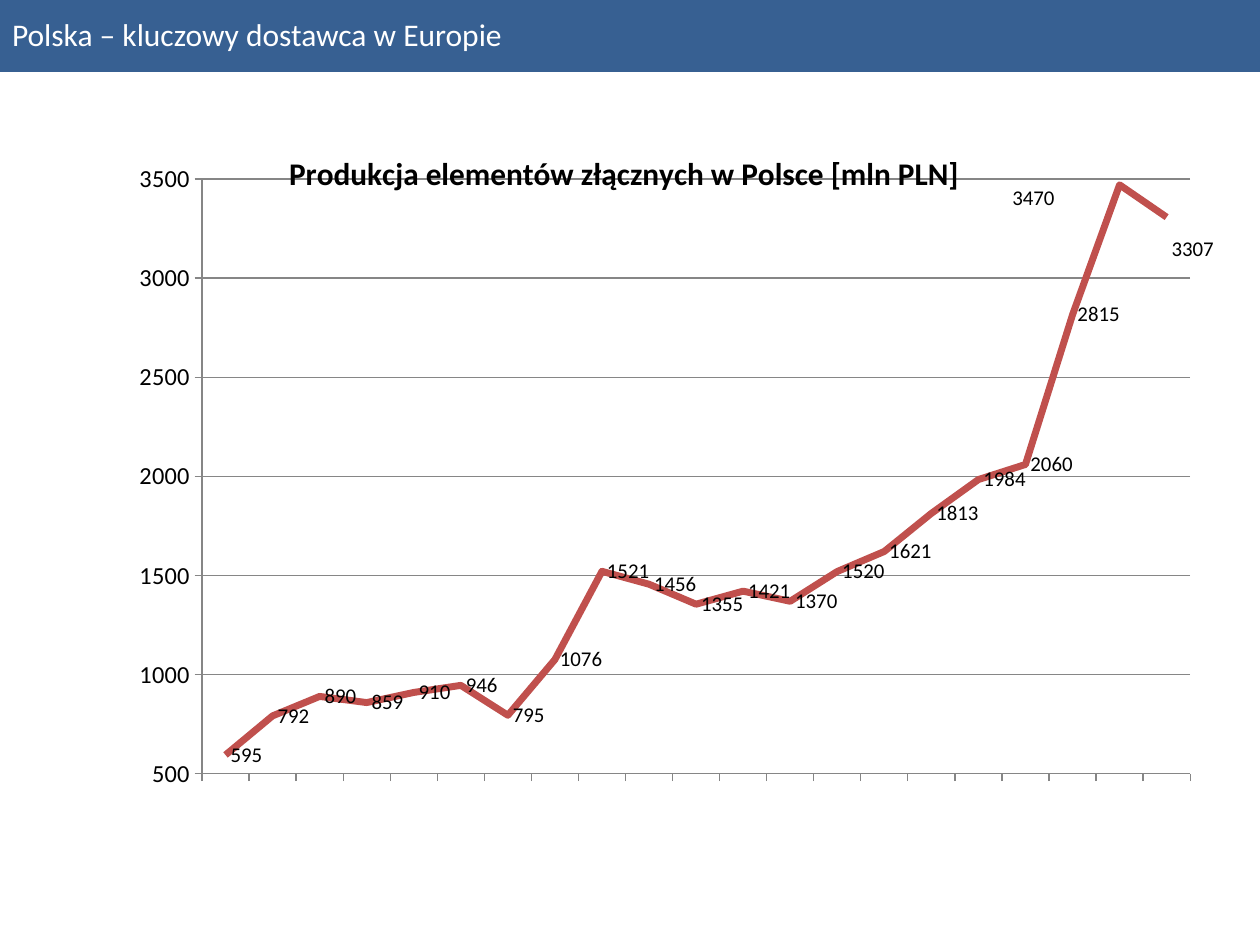
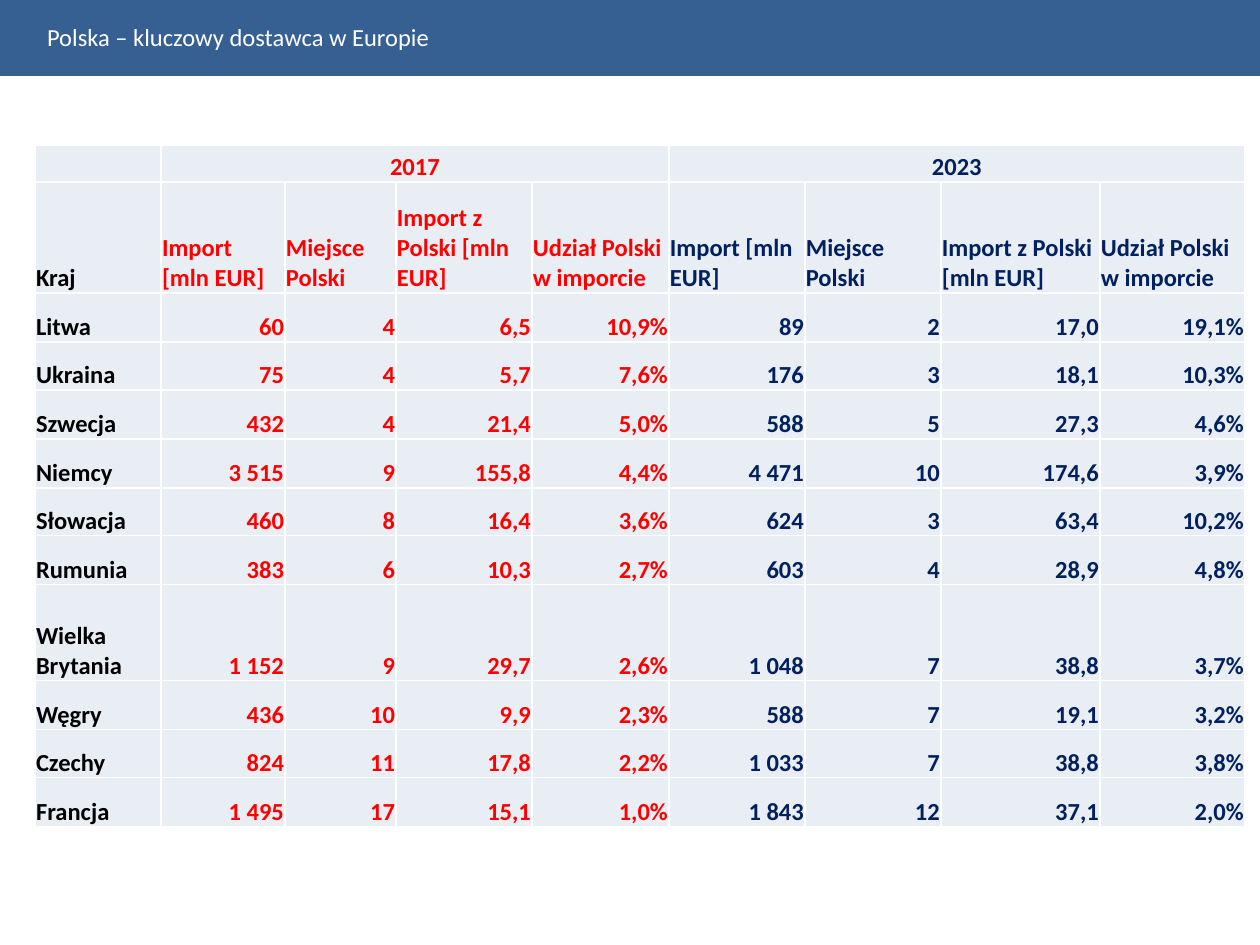
from dataclasses import dataclass

from lxml import etree
from pptx import Presentation
from pptx.chart.data import CategoryChartData
from pptx.dml.color import RGBColor
from pptx.enum.chart import XL_CHART_TYPE, XL_LABEL_POSITION, XL_MARKER_STYLE, XL_TICK_LABEL_POSITION, XL_TICK_MARK
from pptx.enum.shapes import MSO_SHAPE
from pptx.enum.text import MSO_ANCHOR, MSO_AUTO_SIZE, PP_ALIGN
from pptx.oxml.ns import qn
from pptx.util import Pt

RECTANGLE = MSO_SHAPE.RECTANGLE
LINE = XL_CHART_TYPE.LINE
NO_MARKER = XL_MARKER_STYLE.NONE
LABEL_RIGHT = XL_LABEL_POSITION.RIGHT
NO_TICK_LABELS = XL_TICK_LABEL_POSITION.NONE
TICK_OUTSIDE = XL_TICK_MARK.OUTSIDE
MIDDLE, BOTTOM = MSO_ANCHOR.MIDDLE, MSO_ANCHOR.BOTTOM
LEFT, CENTER, RIGHT = PP_ALIGN.LEFT, PP_ALIGN.CENTER, PP_ALIGN.RIGHT
NO_AUTOFIT = MSO_AUTO_SIZE.NONE
TITLE_ONLY = 5
EMU_PER_PX = 914400 / 126


@dataclass(frozen=True)
class Theme:
    """Colours and type sizes shared by the slides."""
    font: str = "Calibri"
    band: str = "376092"
    white: str = "FFFFFF"
    black: str = "000000"
    trend: str = "C0504D"
    grid: str = "868686"
    cell: str = "E9EDF4"
    earlier: str = "FF0000"
    later: str = "002060"
    heading: int = 18
    body: int = 14
    label: int = 12


THEME = Theme()
HEADING = "Polska – kluczowy dostawca w Europie"

PRODUCTION_TITLE = "Produkcja elementów złącznych w Polsce [mln PLN]"
PRODUCTION = (595, 792, 890, 859, 910, 946, 795, 1076, 1521, 1456, 1355,
              1421, 1370, 1520, 1621, 1813, 1984, 2060, 2815, 3470, 3307)
LABEL_SHIFTS = {19: (-113, 13), 20: (0, 32)}

YEARS = ("2017", "2023")
MEASURES = ("Import [mln EUR]", "Miejsce Polski",
            "Import z Polski [mln EUR]", "Udział Polski w imporcie")
IMPORTS = (
    ("Litwa", "60", "4", "6,5", "10,9%", "89", "2", "17,0", "19,1%"),
    ("Ukraina", "75", "4", "5,7", "7,6%", "176", "3", "18,1", "10,3%"),
    ("Szwecja", "432", "4", "21,4", "5,0%", "588", "5", "27,3", "4,6%"),
    ("Niemcy", "3 515", "9", "155,8", "4,4%", "4 471", "10", "174,6", "3,9%"),
    ("Słowacja", "460", "8", "16,4", "3,6%", "624", "3", "63,4", "10,2%"),
    ("Rumunia", "383", "6", "10,3", "2,7%", "603", "4", "28,9", "4,8%"),
    ("Wielka Brytania", "1 152", "9", "29,7", "2,6%", "1 048", "7", "38,8", "3,7%"),
    ("Węgry", "436", "10", "9,9", "2,3%", "588", "7", "19,1", "3,2%"),
    ("Czechy", "824", "11", "17,8", "2,2%", "1 033", "7", "38,8", "3,8%"),
    ("Francja", "1 495", "17", "15,1", "1,0%", "1 843", "12", "37,1", "2,0%"),
)
COLUMN_WIDTHS = (126, 124, 111, 136, 137, 136, 136, 159, 145)
COUNTRY_HEIGHTS = (49, 48, 49)
ROW_HEIGHTS = (37, 111, *COUNTRY_HEIGHTS * 2, 96, *COUNTRY_HEIGHTS)


def px(length):
    """Turn px into EMU."""
    return round(length * EMU_PER_PX)


def rgb(colour):
    """Turn a hex string into a colour."""
    return RGBColor.from_string(colour)


def style(font, size, colour, bold=False):
    """Give a font the shared typeface with a size and colour."""
    font.name, font.size, font.bold = THEME.font, Pt(size), bold
    font.color.rgb = rgb(colour)


def add_heading(slide, band_box, heading_box, size):
    """Place the title placeholder over a full-width band."""
    heading = slide.shapes.title
    band = slide.shapes.add_shape(RECTANGLE, *map(px, band_box))
    heading.element.addprevious(band.element)
    band.shadow.inherit = False
    band.fill.solid()
    band.fill.fore_color.rgb = rgb(THEME.band)
    band.line.fill.background()

    heading.left, heading.top, heading.width, heading.height = map(px, heading_box)
    frame = heading.text_frame
    frame.text = HEADING
    frame.auto_size = NO_AUTOFIT
    frame.word_wrap = True
    frame.vertical_anchor = MIDDLE
    frame.margin_left = frame.margin_right = px(12)
    frame.margin_top = frame.margin_bottom = px(6)
    line = frame.paragraphs[0]
    line.alignment = LEFT
    style(line.font, size, THEME.white)


def set_layout(parent, index, **settings):
    """Give a chart part a manual layout as the child at the index."""
    for old in parent.findall(qn("c:layout")):
        parent.remove(old)
    layout = etree.Element(qn("c:layout"))
    parent.insert(index, layout)
    manual = etree.SubElement(layout, qn("c:manualLayout"))
    for key, value in settings.items():
        etree.SubElement(manual, qn(f"c:{key}")).set("val", str(value))


def hide_leader_lines(labels):
    """Switch off the lines from moved labels to their points."""
    for old in labels.findall(qn("c:showLeaderLines")):
        labels.remove(old)
    etree.SubElement(labels, qn("c:showLeaderLines")).set("val", "0")


def style_axis(axis):
    """Give an axis its text, line and outside ticks."""
    style(axis.tick_labels.font, THEME.body, THEME.black)
    axis.major_tick_mark = TICK_OUTSIDE
    axis.format.line.color.rgb = rgb(THEME.grid)
    axis.format.line.width = Pt(0.75)


def add_production_chart(slide, box):
    """Draw the yearly production as a labelled line."""
    width, height = box[2:]
    data = CategoryChartData()
    data.categories = [""] * len(PRODUCTION)
    data.add_series("", PRODUCTION)
    chart = slide.shapes.add_chart(LINE, *map(px, box), data).chart
    style(chart.font, THEME.label, THEME.black)
    chart.has_legend = False

    chart.has_title = True
    title = chart.chart_title
    title.text_frame.text = PRODUCTION_TITLE
    style(title.text_frame.paragraphs[0].font, THEME.heading, THEME.black, bold=True)
    set_layout(title._element, 1, xMode="edge", yMode="edge",
               x=231 / width, y=21 / height)
    plot = chart.plots[0]
    plot.vary_by_categories = False
    set_layout(plot._element.getparent(), 0, layoutTarget="inner",
               xMode="edge", yMode="edge", x=149 / width, y=54 / height,
               w=995 / width, h=595 / height)

    values = chart.value_axis
    values.minimum_scale, values.maximum_scale, values.major_unit = 500, 3500, 500
    values.major_gridlines.format.line.color.rgb = rgb(THEME.grid)
    values.major_gridlines.format.line.width = Pt(0.75)
    for axis in (values, chart.category_axis):
        style_axis(axis)
    chart.category_axis.tick_label_position = NO_TICK_LABELS

    production = plot.series[0]
    production.smooth = False
    production.marker.style = NO_MARKER
    production.format.line.color.rgb = rgb(THEME.trend)
    production.format.line.width = Pt(4)
    labels = production.data_labels
    labels.show_value = True
    labels.position = LABEL_RIGHT
    style(labels.font, THEME.label, THEME.black)
    hide_leader_lines(labels._element)
    for i, (dx, dy) in LABEL_SHIFTS.items():
        label = production.points[i].data_label
        label.position = LABEL_RIGHT
        style(label.font, THEME.label, THEME.black)
        set_layout(label._get_or_add_dLbl(), 1, x=dx / width, y=dy / height)


def add_borders(cell):
    """Draw thin white lines on all sides of a cell."""
    properties = cell._tc.get_or_add_tcPr()
    for index, side in enumerate(("lnL", "lnR", "lnT", "lnB")):
        line = etree.Element(qn(f"a:{side}"), w=str(Pt(1)))
        fill = etree.SubElement(line, qn("a:solidFill"))
        etree.SubElement(fill, qn("a:srgbClr"), val=THEME.white)
        properties.insert(index, line)


def fill_cell(cell, text, colour, alignment):
    """Write bold text at the bottom of a tinted cell."""
    cell.fill.solid()
    cell.fill.fore_color.rgb = rgb(THEME.cell)
    add_borders(cell)
    cell.vertical_anchor = BOTTOM
    cell.margin_left = cell.margin_right = cell.margin_top = px(1)
    cell.margin_bottom = 0
    cell.text = text
    line = cell.text_frame.paragraphs[0]
    line.alignment = alignment
    style(line.font, THEME.body, colour, bold=True)


def add_import_table(slide, left, top):
    """Set out the imports by country for both years."""
    box = (left, top, sum(COLUMN_WIDTHS), sum(ROW_HEIGHTS))
    table = slide.shapes.add_table(
        len(ROW_HEIGHTS), len(COLUMN_WIDTHS), *map(px, box)).table
    table.first_row = table.horz_banding = False
    for column, width in zip(table.columns, COLUMN_WIDTHS):
        column.width = px(width)
    for row, height in zip(table.rows, ROW_HEIGHTS):
        row.height = px(height)

    span = len(MEASURES)
    colours = [THEME.black] + [THEME.earlier] * span + [THEME.later] * span
    year_row = [""]
    for year in YEARS:
        year_row += [year] + [""] * (span - 1)
    rows = (year_row, ("Kraj", *MEASURES * len(YEARS)), *IMPORTS)
    for r, texts in enumerate(rows):
        for c, text in enumerate(texts):
            alignment = CENTER if r == 0 else LEFT if r == 1 or c == 0 else RIGHT
            fill_cell(table.cell(r, c), text, colours[c], alignment)
    for start in range(1, len(colours), span):
        table.cell(0, start).merge(table.cell(0, start + span - 1))


def build_production_slide(slide):
    """Compose the slide with the production chart."""
    band = (0, -4, 1260, 76)
    add_heading(slide, band, band, THEME.heading)
    add_production_chart(slide, (54, 125, 1160, 714))


def build_import_slide(slide):
    """Compose the slide with the import table."""
    add_heading(slide, (0, 0, 1260, 76), (35, 12, 1134, 49), THEME.body)
    add_import_table(slide, 35, 145)


def main():
    """Build and save the presentation."""
    deck = Presentation()
    deck.slide_width, deck.slide_height = px(1260), px(945)
    for build in (build_production_slide, build_import_slide):
        build(deck.slides.add_slide(deck.slide_layouts[TITLE_ONLY]))
    deck.save("out.pptx")


if __name__ == "__main__":
    main()
